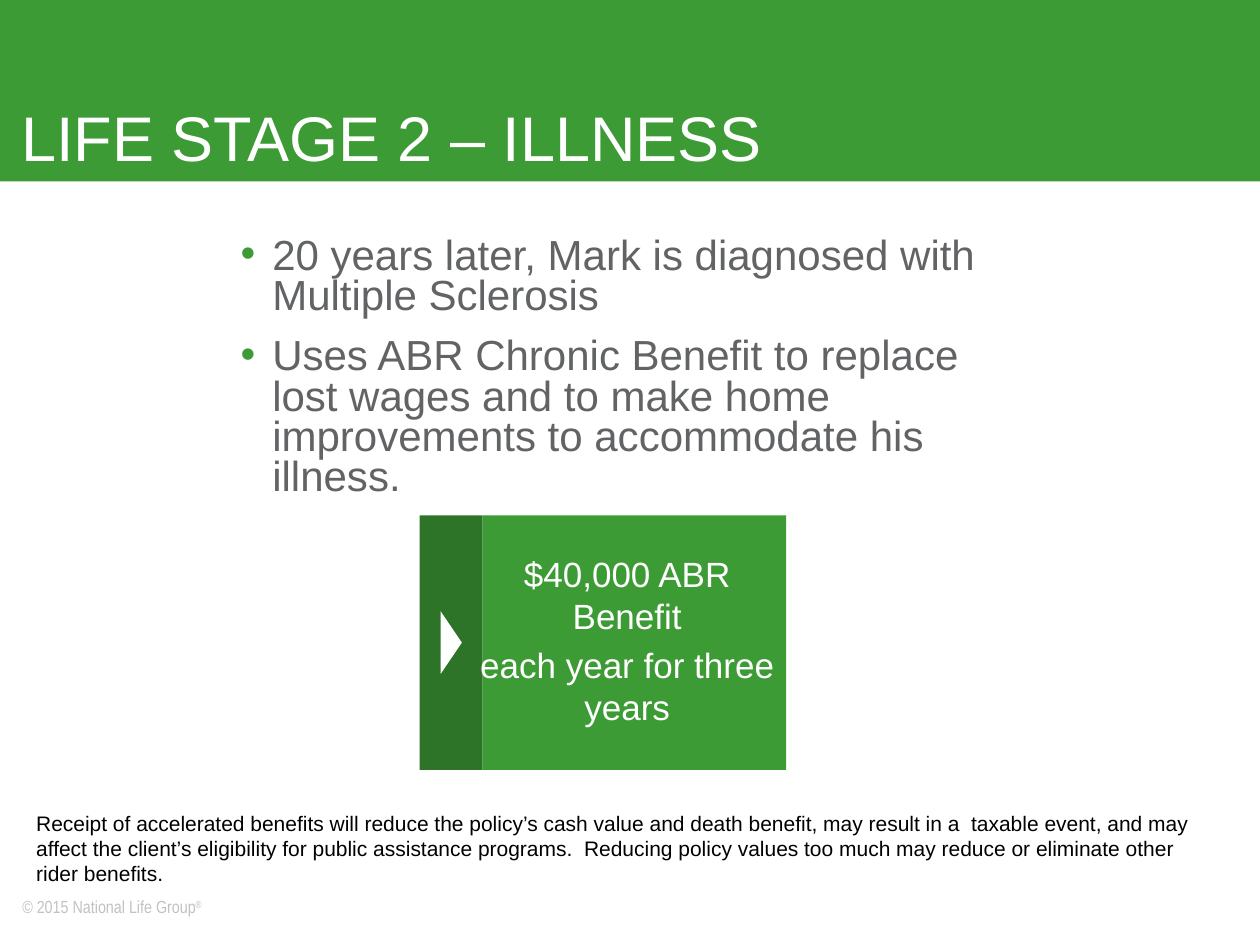
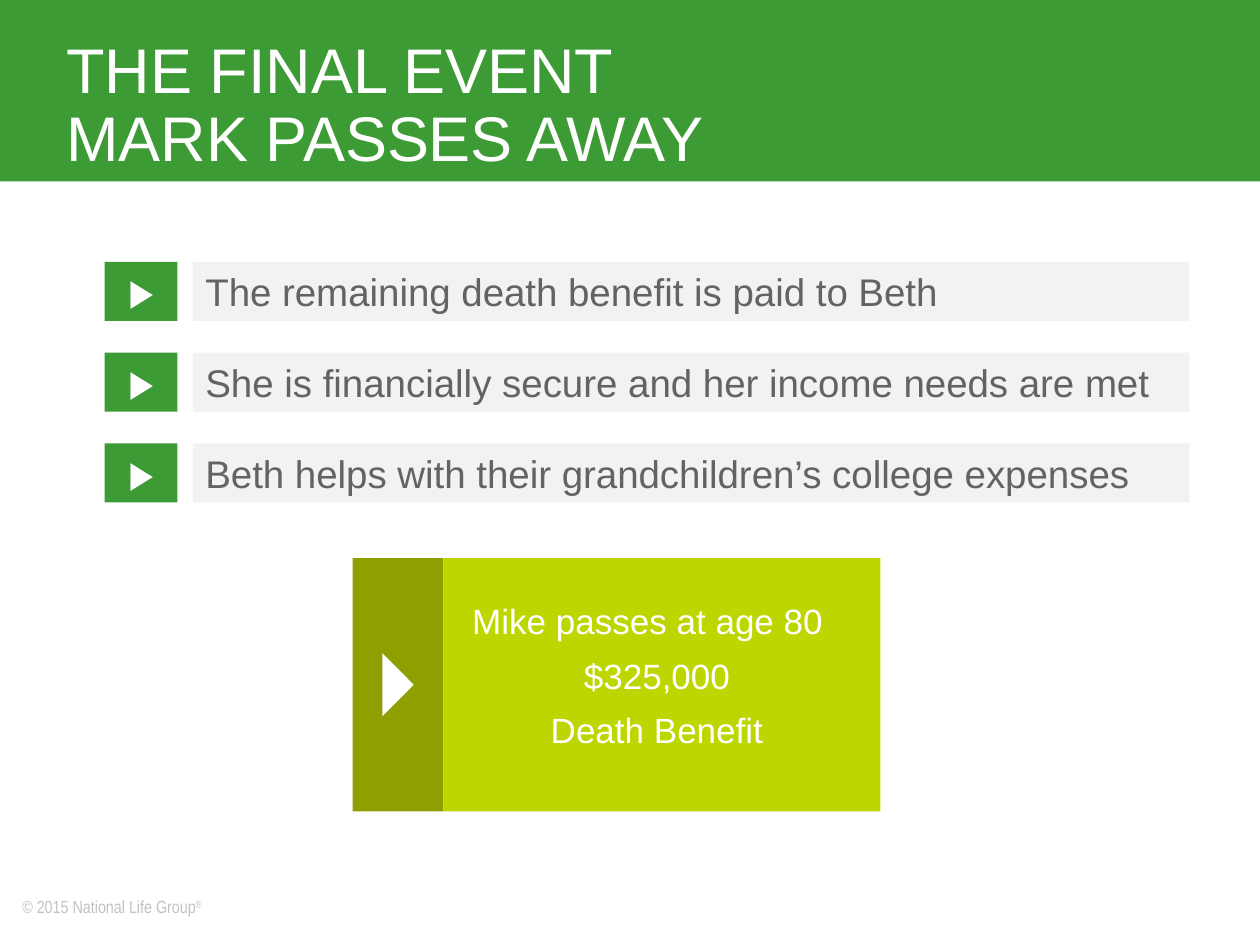
import pptx
import pptx.util
import pptx.dml.color
import pptx.enum.shapes
import pptx.enum.text
import pptx.oxml.ns
import lxml.etree

Cm, Pt = pptx.util.Cm, pptx.util.Pt
SHAPE = pptx.enum.shapes.MSO_SHAPE
ALIGN = pptx.enum.text.PP_ALIGN
ANCHOR = pptx.enum.text.MSO_ANCHOR

# Content
COPYRIGHT = "© 2015 National Life Group"
ILLNESS_TITLE = "LIFE STAGE 2 – ILLNESS"
ILLNESS_POINTS = [
    "20 years later, Mark is diagnosed with Multiple Sclerosis",
    "Uses ABR Chronic Benefit to replace lost wages and to make home "
    "improvements to accommodate his illness.",
]
ILLNESS_BENEFIT = ["$40,000 ABR Benefit", "each year for three years"]
DISCLAIMER = (
    "Receipt of accelerated benefits will reduce the policy’s cash value and "
    "death benefit, may result in a  taxable event, and may affect the client’s "
    "eligibility for public assistance programs.  Reducing policy values too much "
    "may reduce or eliminate other rider benefits."
)
FINAL_TITLE = "THE FINAL EVENT\nMARK PASSES AWAY"
FINAL_POINTS = [
    "The remaining death benefit is paid to Beth",
    "She is financially secure and her income needs are met",
    "Beth helps with their grandchildren’s college expenses",
]
FINAL_BENEFIT = ["Mike passes at age 80", "$325,000", "Death Benefit"]

# Shared look; lengths in centimetres
GREEN, DARK_GREEN = "3D9B35", "2E7428"
LIME, DARK_LIME = "BED600", "8EA000"
WHITE, BLACK, GREY = "FFFFFF", "000000", "616365"
PALE_GREY, FOOTER_GREY = "F2F2F2", "C2C2C2"
PAGE_WIDTH, PAGE_HEIGHT = 25.4, 19.05
BAND_HEIGHT = 3.66
POINTER_HEIGHT = 1.27


def color(code):
    return pptx.dml.color.RGBColor.from_string(code)


def style(target, values):
    for name, value in values.items():
        setattr(target, name, value)


def add_block(page, kind, place, fill):
    block = page.shapes.add_shape(kind, *map(Cm, place))
    block.shadow.inherit = False
    block.fill.solid()
    block.fill.fore_color.rgb = color(fill)
    block.line.fill.background()
    return block


def write(box, lines, size, ink, font="Arial", anchor=ANCHOR.TOP, gap=0, **para_format):
    """Fill a box with paragraphs, gap points apart."""
    style(box.text_frame, {"word_wrap": True, "vertical_anchor": anchor})
    for index, line in enumerate(lines):
        para = box.text_frame.paragraphs[0] if index == 0 else box.text_frame.add_paragraph()
        para.text = line
        style(para, {"alignment": ALIGN.LEFT, **para_format})
        if index and gap:
            para.space_before = Pt(gap)
        for span in para.runs:
            style(span.font, {"size": Pt(size), "name": font})
            span.font.color.rgb = color(ink)
    return box.text_frame.paragraphs


def add_text(page, place, lines, size, ink, **options):
    box = page.shapes.add_textbox(*map(Cm, place))
    return write(box, lines, size, ink, **options)


def add_bullet(para, ink):
    props = para._p.get_or_add_pPr()
    style_values = {"marL": Cm(0.64), "indent": -Cm(0.64)}
    for name, value in style_values.items():
        props.set(name, str(int(value)))
    tag = pptx.oxml.ns.qn
    bullet_color = lxml.etree.SubElement(props, tag("a:buClr"))
    lxml.etree.SubElement(bullet_color, tag("a:srgbClr")).set("val", ink)
    lxml.etree.SubElement(props, tag("a:buFont")).set("typeface", "Arial")
    lxml.etree.SubElement(props, tag("a:buChar")).set("char", "•")


def add_page(deck, title, title_left):
    """Blank page with the footer, the green band and its title."""
    page = deck.slides.add_slide(deck.slide_layouts[6])
    footer = add_text(page, (0.2, 17.93, 5.23, 0.69), [COPYRIGHT], 10, FOOTER_GREY,
                      font="Arial Narrow", anchor=ANCHOR.MIDDLE)[0]
    mark = footer.add_run()
    mark.text = "®"
    style(mark.font, {"size": Pt(10), "name": "Arial Narrow"})
    mark.font.color.rgb = color(FOOTER_GREY)
    mark._r.get_or_add_rPr().set("baseline", "30000")

    add_block(page, SHAPE.RECTANGLE, (0, 0, PAGE_WIDTH, BAND_HEIGHT), GREEN)
    add_text(page, (title_left, 0, PAGE_WIDTH - title_left, BAND_HEIGHT), [title], 36, WHITE,
             anchor=ANCHOR.BOTTOM, line_spacing=0.9)
    return page


def add_callout(page, place, stripe_width, pointer_width, stripe_fill, panel_fill):
    """Panel with a darker stripe at its left and a pointer centred in the stripe."""
    left, top, width, height = place
    add_block(page, SHAPE.RECTANGLE, (left, top, stripe_width, height), stripe_fill)
    # The triangle is turned a quarter, so its base is the pointer's height
    pointer = add_block(page, SHAPE.ISOSCELES_TRIANGLE,
                        (left + (stripe_width - POINTER_HEIGHT) / 2,
                         top + (height - pointer_width) / 2,
                         POINTER_HEIGHT, pointer_width), WHITE)
    pointer.rotation = 90
    add_block(page, SHAPE.RECTANGLE,
              (left + stripe_width, top, width - stripe_width, height), panel_fill)


def build_illness(deck):
    page = add_page(deck, ILLNESS_TITLE, 0.18)
    points = add_text(page, (4.6, 4.67, 16.2, 5.74), ILLNESS_POINTS, 24, GREY,
                      gap=11.5, line_spacing=0.8)
    for para in points:
        add_bullet(para, GREEN)
    add_text(page, (0.48, 16.21, 23.88, 1.78), [DISCLAIMER], 12, BLACK)
    add_callout(page, (8.46, 10.39, 7.39, 5.13), 1.27, 0.43, DARK_GREEN, GREEN)
    add_text(page, (9.37, 11.02, 6.55, 3.84), ILLNESS_BENEFIT, 20, WHITE,
             gap=4, alignment=ALIGN.CENTER)


def build_final_event(deck):
    page = add_page(deck, FINAL_TITLE, 1.09)
    # Rows: a play marker and a pale bar
    row_top, row_step, row_height = 5.28, 1.83, 1.19
    for index, point in enumerate(FINAL_POINTS):
        top = row_top + index * row_step
        bar = add_block(page, SHAPE.RECTANGLE, (3.89, top, 20.09, row_height), PALE_GREY)
        write(bar, [point], 22, GREY)
        marker = add_block(page, SHAPE.RECTANGLE, (2.11, top, 1.47, row_height), GREEN)
        write(marker, ["▶"], 22, WHITE, anchor=ANCHOR.MIDDLE, alignment=ALIGN.CENTER)

    add_callout(page, (7.11, 11.25, 10.64, 5.11), 1.83, 0.63, DARK_LIME, LIME)
    benefit = add_text(page, (9.27, 11.96, 7.95, 3.33), FINAL_BENEFIT, 20, WHITE,
                       gap=7.2, alignment=ALIGN.CENTER)
    benefit[0].alignment = ALIGN.LEFT


def main():
    deck = pptx.Presentation()
    style(deck, {"slide_width": Cm(PAGE_WIDTH), "slide_height": Cm(PAGE_HEIGHT)})
    build_illness(deck)
    build_final_event(deck)
    deck.save("out.pptx")


if __name__ == "__main__":
    main()
